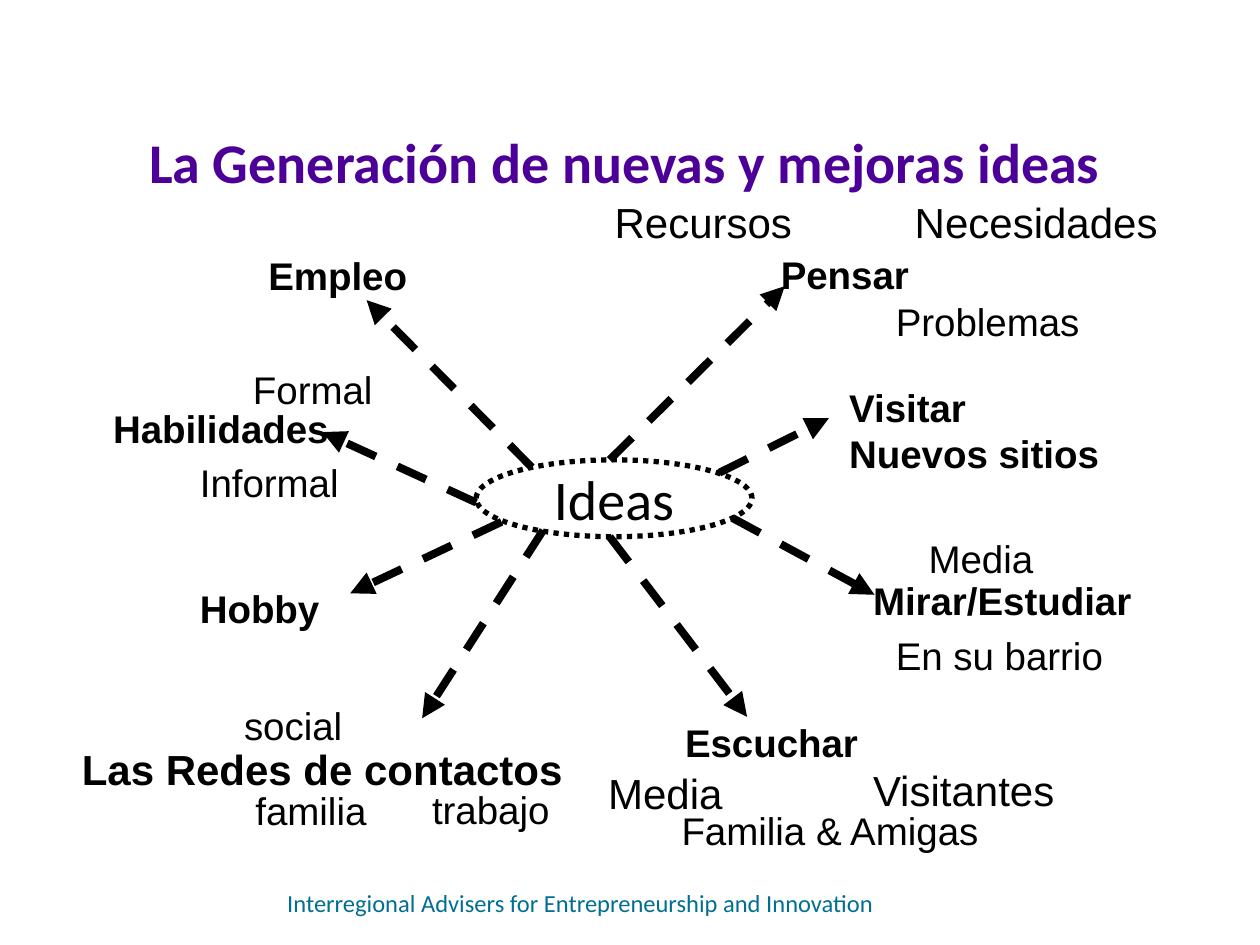
from dataclasses import dataclass

from lxml import etree
from pptx import Presentation
from pptx.dml.color import RGBColor
from pptx.enum.dml import MSO_LINE
from pptx.enum.shapes import MSO_CONNECTOR, MSO_SHAPE
from pptx.enum.text import MSO_ANCHOR, MSO_AUTO_SIZE, PP_ALIGN
from pptx.oxml.ns import qn
from pptx.util import Cm, Pt

STRAIGHT = MSO_CONNECTOR.STRAIGHT
OVAL = MSO_SHAPE.OVAL
DASH = MSO_LINE.DASH
DOTS = MSO_LINE.ROUND_DOT
CENTER = PP_ALIGN.CENTER
TOP = MSO_ANCHOR.TOP
MIDDLE = MSO_ANCHOR.MIDDLE
FIT_SHAPE = MSO_AUTO_SIZE.SHAPE_TO_FIT_TEXT
NO_FIT = MSO_AUTO_SIZE.NONE


@dataclass(frozen=True)
class Theme:
    heading_font: str = "Calibri"
    label_font: str = "Arial"
    ink: RGBColor = RGBColor(0x00, 0x00, 0x00)
    paper: RGBColor = RGBColor(0xFF, 0xFF, 0xFF)
    title: RGBColor = RGBColor(0x4C, 0x00, 0x98)
    footer: RGBColor = RGBColor(0x00, 0x6F, 0x92)
    title_size: int = 32
    large_size: int = 24
    label_size: int = 22
    footer_size: int = 14


THEME = Theme()
LARGE = THEME.large_size
NORMAL = THEME.label_size

ARROWS = {
    "Pensar": (12.29, 9.27, 15.82, 5.77),
    "Visitar": (14.5, 9.53, 16.71, 8.43),
    "Mirar": (14.76, 10.44, 17.63, 11.99),
    "Escuchar": (12.29, 10.82, 15.06, 14.45),
    "Empleo": (10.72, 9.42, 7.39, 6.05),
    "Habilidades": (9.6, 10.13, 6.5, 8.71),
    "Hobby": (10.11, 10.52, 7.06, 11.96),
    "Redes": (10.95, 10.69, 8.51, 14.48),
}

TOPICS = [
    ("Pensar", 15.49, 4.93, 3.12, NORMAL),
    ("Visitar\nNuevos sitios", 16.87, 7.62, 5.64, NORMAL),
    ("Mirar/Estudiar", 17.35, 11.51, 5.79, NORMAL),
    ("Escuchar", 13.56, 14.38, 4.04, NORMAL),
    ("Empleo", 5.16, 4.95, 3.35, NORMAL),
    ("Habilidades", 2.03, 8.05, 4.9, NORMAL),
    ("Hobby", 3.78, 11.66, 2.95, NORMAL),
    ("Las Redes de contactos", 1.4, 14.86, 10.31, LARGE),
]

DETAILS = [
    ("Recursos", 12.14, 3.84, 4.11, LARGE),
    ("Necesidades", 18.19, 3.84, 5.46, LARGE),
    ("Problemas", 17.81, 5.89, 4.27, NORMAL),
    ("Media", 18.47, 10.67, 2.62, NORMAL),
    ("En su barrio", 17.81, 12.62, 4.75, NORMAL),
    ("Visitantes", 17.35, 15.29, 4.19, LARGE),
    ("Media", 12.01, 15.34, 2.82, LARGE),
    ("Formal", 4.85, 7.26, 2.92, NORMAL),
    ("Informal", 3.78, 9.12, 3.33, NORMAL),
    ("social", 4.67, 14.02, 2.51, NORMAL),
    ("trabajo", 8.46, 15.72, 2.92, NORMAL),
    ("familia", 4.9, 15.75, 2.77, NORMAL),
]


def write(frame, text, size, font, color, bold=False, align=None):
    frame.text = text
    for para in frame.paragraphs:
        para.alignment = align
        for span in para.runs:
            span.font.size = Pt(size)
            span.font.name = font
            span.font.bold = bold
            span.font.color.rgb = color


def add_title(page, text):
    title = page.shapes.title
    title.left, title.top = Cm(0.48), Cm(2.44)
    title.width, title.height = Cm(24.23), Cm(1.42)
    frame = title.text_frame
    frame.vertical_anchor = TOP
    frame.auto_size = NO_FIT
    write(frame, text, THEME.title_size, THEME.heading_font, THEME.title, True, CENTER)


def add_label(page, text, left, top, width, size, bold=False, wrap=False):
    height = 1.3 if size == LARGE else 1.19
    if "\n" in text:
        height = 2.13
    box = page.shapes.add_textbox(Cm(left), Cm(top), Cm(width), Cm(height))
    frame = box.text_frame
    frame.word_wrap = wrap
    frame.auto_size = FIT_SHAPE
    write(frame, text, size, THEME.label_font, THEME.ink, bold)


def add_arrow(page, start_x, start_y, end_x, end_y):
    arrow = page.shapes.add_connector(
        STRAIGHT, Cm(start_x), Cm(start_y), Cm(end_x), Cm(end_y)
    )
    arrow.line.color.rgb = THEME.ink
    arrow.line.width = Pt(4.5)
    arrow.line.dash_style = DASH
    outline = arrow.line._get_or_add_ln()
    etree.SubElement(outline, qn("a:tailEnd"), type="triangle")
    etree.SubElement(arrow._element.spPr, qn("a:effectLst"))


def add_hub(page, text):
    hub = page.shapes.add_shape(OVAL, Cm(9.6), Cm(9.27), Cm(5.56), Cm(1.55))
    hub.shadow.inherit = False
    hub.fill.solid()
    hub.fill.fore_color.rgb = THEME.paper
    hub.line.color.rgb = THEME.ink
    hub.line.width = Pt(3)
    hub.line.dash_style = DOTS
    frame = hub.text_frame
    frame.word_wrap = False
    frame.vertical_anchor = MIDDLE
    write(frame, text, THEME.title_size, THEME.heading_font, THEME.ink, align=CENTER)


def add_footer(page, text):
    box = page.shapes.add_textbox(Cm(0.46), Cm(17.78), Cm(19.05), Cm(0.86))
    frame = box.text_frame
    frame.word_wrap = True
    frame.margin_left = Cm(5.33)
    write(frame, text, THEME.footer_size, THEME.heading_font, THEME.footer)


def main():
    deck = Presentation()
    deck.slide_width, deck.slide_height = Cm(25.4), Cm(19.05)
    page = deck.slides.add_slide(deck.slide_layouts[5])
    add_footer(page, "Interregional Advisers for Entrepreneurship and Innovation")
    add_title(page, "La Generación de nuevas y mejoras ideas")
    add_hub(page, "Ideas")
    for ends in ARROWS.values():
        add_arrow(page, *ends)
    for topic in TOPICS:
        add_label(page, *topic, bold=True)
    for detail in DETAILS:
        add_label(page, *detail)
    add_label(page, "Familia & Amigas", 13.49, 16.15, 7.16, NORMAL, wrap=True)
    deck.save("out.pptx")


if __name__ == "__main__":
    main()
